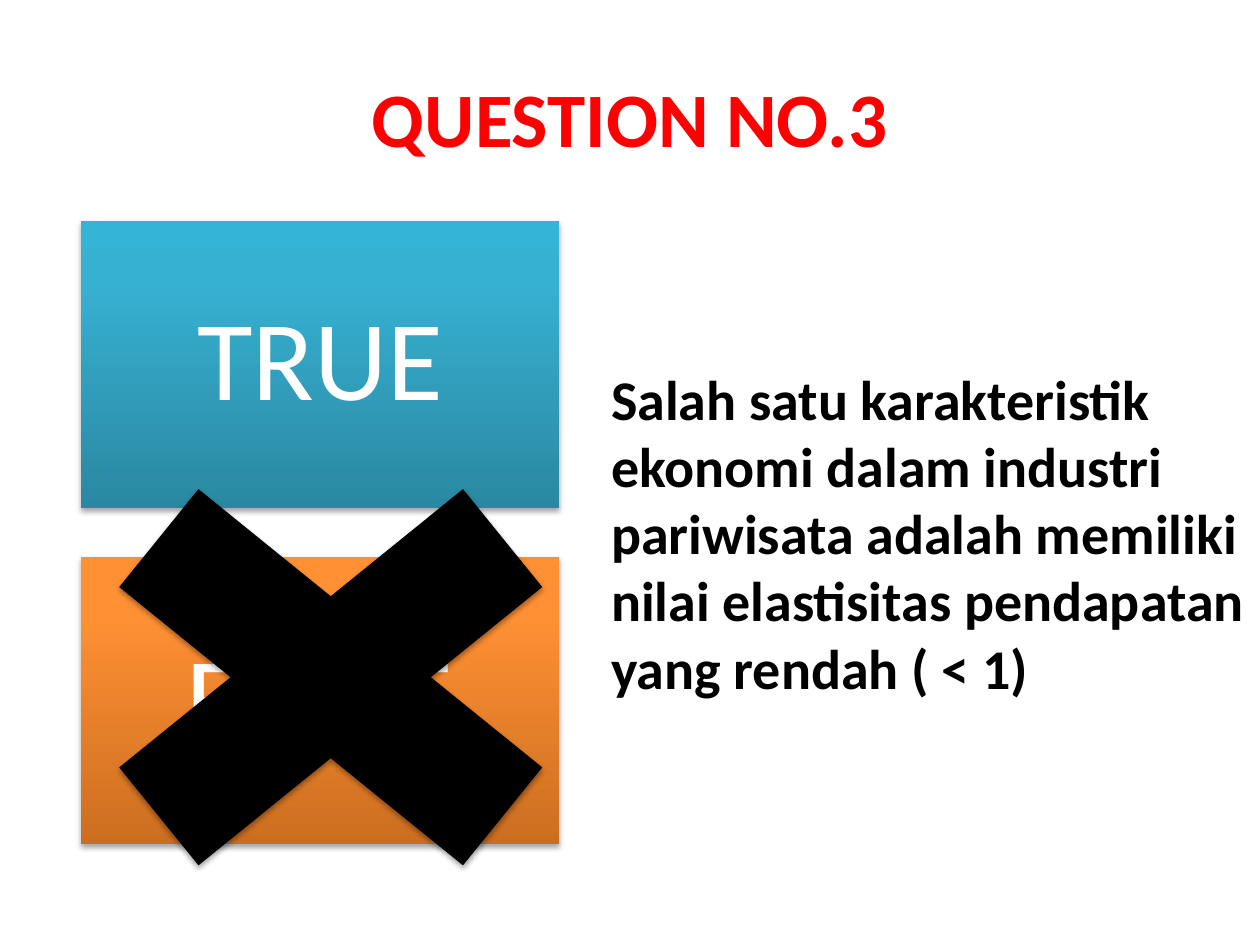
from dataclasses import dataclass

from lxml.etree import SubElement
from pptx import Presentation
from pptx.dml.color import RGBColor
from pptx.enum.shapes import MSO_SHAPE
from pptx.enum.text import MSO_ANCHOR, PP_ALIGN
from pptx.oxml.ns import qn
from pptx.util import Inches, Pt

RED = RGBColor(0xFF, 0x00, 0x00)
BLACK = RGBColor(0x00, 0x00, 0x00)
WHITE = RGBColor(0xFF, 0xFF, 0xFF)
BLUES = (RGBColor(0x2A, 0x88, 0xA2), RGBColor(0x37, 0xB1, 0xD2), RGBColor(0x34, 0xB4, 0xD6))
ORANGES = (RGBColor(0xCC, 0x6E, 0x20), RGBColor(0xFF, 0x90, 0x34), RGBColor(0xFF, 0x91, 0x36))
STOPS = (0, 80, 100)
FONT = "Calibri"
TOP = 1.75
STEP = 2.67


@dataclass
class Card:
    label: str
    tones: tuple[RGBColor, ...]


CARDS = (Card("TRUE", BLUES), Card("FALSE", ORANGES))


def place(shape, left: float, top: float, width: float, height: float) -> None:
    shape.left, shape.top = Inches(left), Inches(top)
    shape.width, shape.height = Inches(width), Inches(height)


def write(shape, text: str, size: int, color: RGBColor, bold: bool, align: PP_ALIGN):
    frame = shape.text_frame
    frame.word_wrap = True
    frame.vertical_anchor = MSO_ANCHOR.MIDDLE
    para = frame.paragraphs[0]
    para.text = text
    para.alignment = align
    font = para.runs[0].font
    font.name, font.size, font.bold = FONT, Pt(size), bold
    font.color.rgb = color
    return para


def shade(shape) -> None:
    """Give the shape a soft shadow just below it."""
    shape.shadow.inherit = False
    effects = shape._element.spPr.find(qn("a:effectLst"))
    outer = SubElement(effects, qn("a:outerShdw"), blurRad=str(Pt(3.1)),
                       dist=str(Pt(1.8)), dir="5400000", rotWithShape="0")
    tint = SubElement(outer, qn("a:srgbClr"), val="000000")
    SubElement(tint, qn("a:alpha"), val="35000")


def blend(shape, tones: tuple[RGBColor, ...]) -> None:
    """Fill the shape with a gradient that runs from bottom to top."""
    shape.fill.gradient()
    shape.fill.gradient_angle = 90
    stops = shape._element.spPr.find(qn("a:gradFill")).find(qn("a:gsLst"))
    stops.clear()
    for stop, tone in zip(STOPS, tones):
        mark = SubElement(stops, qn("a:gs"), pos=str(stop * 1000))
        SubElement(mark, qn("a:srgbClr"), val=str(tone))


def draw_card(slide, card: Card, top: float) -> None:
    box = slide.shapes.add_shape(MSO_SHAPE.RECTANGLE, Inches(0.64), Inches(top),
                                 Inches(3.8), Inches(2.28))
    blend(box, card.tones)
    box.line.fill.background()
    shade(box)
    frame = box.text_frame
    frame.margin_left = frame.margin_right = Inches(0.27)
    frame.margin_top = frame.margin_bottom = Inches(0.27)
    para = write(box, card.label, 65, WHITE, False, PP_ALIGN.CENTER)
    para.line_spacing = 0.9


def draw_cross(slide) -> None:
    cross = slide.shapes.add_shape(MSO_SHAPE.MATH_MULTIPLY, Inches(0), Inches(3.25),
                                   Inches(5.25), Inches(4.25))
    cross.fill.solid()
    cross.fill.fore_color.rgb = BLACK
    cross.line.fill.background()
    shade(cross)


def main() -> None:
    deck = Presentation()
    deck.slide_width, deck.slide_height = Inches(10), Inches(7.5)
    slide = deck.slides.add_slide(deck.slide_layouts[1])

    # Title
    title = slide.shapes.title
    place(title, 0.5, 0.3, 9, 1.25)
    write(title, "QUESTION NO.3", 44, RED, True, PP_ALIGN.CENTER)

    # Statement, without a bullet
    body = slide.placeholders[1]
    place(body, 4.75, TOP, 5.25, 4.95)
    para = write(body, "Salah satu karakteristik ekonomi dalam industri pariwisata adalah "
                 "memiliki nilai elastisitas pendapatan yang rendah ( < 1)",
                 32, BLACK, True, PP_ALIGN.LEFT)
    props = para._p.get_or_add_pPr()
    props.set("marL", "0")
    props.set("indent", "0")
    SubElement(props, qn("a:buNone"))

    # Answers, the wrong one crossed out
    for row, card in enumerate(CARDS):
        draw_card(slide, card, TOP + row * STEP)
    draw_cross(slide)

    deck.save("out.pptx")


if __name__ == "__main__":
    main()
